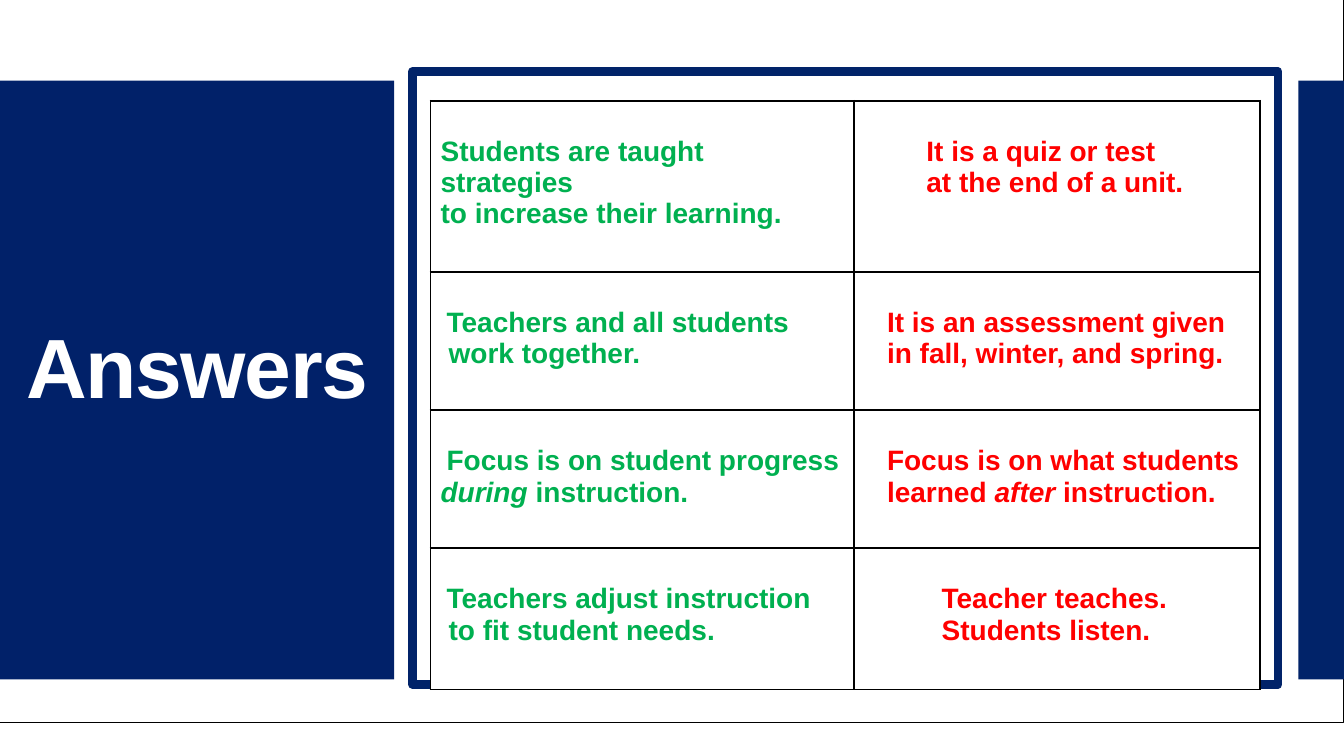
"""Build the answers slide with its two-column comparison table."""
from pptx import Presentation, util as u
from pptx.dml import color
from pptx.enum import shapes, text
from pptx.oxml import xmlchemy as xc

HUES = {"white": "FFFFFF", "black": "000000", "navy": "012169",
        "blue": "012369", "green": "00B050", "red": "FF0000"}
WIDE, HIGH = u.Inches(13.33), u.Inches(7.5)
COLS = (31.5, 30.22)
ROWS = (22.67, 18.27, 18.27, 18.67)
CELLS = [
    [[(0, "Students are taught strategies"), (0, "to increase their learning.")],
     [(4.65, "It is a quiz or test"), (4.65, "at the end of a unit.")]],
    [[(0.45, "Teachers and all students"), (0.6, "work together.")],
     [(1.72, "It is an assessment given"), (1.72, "in fall, winter, and spring.")]],
    [[(0.45, "Focus is on student progress"), (0, "*during* instruction.")],
     [(1.72, "Focus is on what students"), (1.72, "learned *after* instruction.")]],
    [[(0.45, "Teachers adjust instruction"), (0.6, "to fit student needs.")],
     [(5.78, "Teacher teaches."), (5.78, "Students listen.")]],
]


class Deck:
    """Hold the style and slide, on a grid of 100 columns by 100 rows."""

    def __init__(self):
        self.prs = Presentation()
        self.prs.slide_width, self.prs.slide_height = WIDE, HIGH
        self.page = self.prs.slides.add_slide(self.prs.slide_layouts[5])
        self.font = {"name": "Arial", "bold": True}

    def col(self, n):
        return u.Emu(int(WIDE * n / 100))

    def row(self, n):
        return u.Emu(int(HIGH * n / 100))

    def area(self, x, y, w, h):
        return self.col(x), self.row(y), self.col(w), self.row(h)

    def paint(self, fill, hue):
        fill.solid()
        fill.fore_color.rgb = color.RGBColor.from_string(HUES[hue])

    def put(self, item, vals):
        for key, val in vals.items():
            setattr(item, key, val)

    def words(self, para, line, hue, size):
        for n, part in enumerate(line.split("*")):
            if part:
                run = para.add_run()
                run.text = part
                self.put(run.font, {**self.font, "size": u.Pt(size), "italic": n % 2 == 1})
                self.paint(run.font.fill, hue)

    def panel(self, spot, fill, edge=None, width=0):
        box = self.page.shapes.add_shape(shapes.MSO_SHAPE.RECTANGLE, *self.area(*spot))
        box.shadow.inherit = False
        self.paint(box.fill, fill)
        if edge:
            self.paint(box.line.fill, edge)
            box.line.width = u.Pt(width)
            box.line._get_or_add_ln().append(xc.OxmlElement("a:round"))
        else:
            box.line.fill.background()

    def title(self, spot, line, hue, size):
        head = self.page.shapes.title
        left, top, width, height = self.area(*spot)
        self.put(head, {"left": left, "top": top, "width": width, "height": height})
        self.put(head.text_frame, {"vertical_anchor": text.MSO_ANCHOR.BOTTOM,
                                   "word_wrap": True, "auto_size": text.MSO_AUTO_SIZE.NONE})
        para = head.text_frame.paragraphs[0]
        self.put(para, {"alignment": text.PP_ALIGN.CENTER, "line_spacing": 0.9})
        self.words(para, line, hue, size)
        para.runs[0].font._element.set("spc", "-100")
        self.page.shapes._spTree.append(head._element)

    def edge(self, cell, hue, width):
        props = cell._tc.get_or_add_tcPr()
        for n, side in enumerate(("lnL", "lnR", "lnT", "lnB")):
            line = xc.OxmlElement("a:" + side)
            line.set("w", str(u.Pt(width)))
            fill = xc.OxmlElement("a:solidFill")
            tone = xc.OxmlElement("a:srgbClr")
            tone.set("val", HUES[hue])
            fill.append(tone)
            line.append(fill)
            props.insert(n, line)

    def cell(self, cell, lines, hue):
        self.put(cell, {"margin_top": self.row(4.67), "margin_left": u.Inches(0.1),
                        "margin_right": u.Inches(0.1), "margin_bottom": u.Inches(0.05)})
        self.paint(cell.fill, "white")
        self.edge(cell, "black", 1.5)
        frame = cell.text_frame
        for n, (inset, line) in enumerate(lines):
            para = frame.add_paragraph() if n else frame.paragraphs[0]
            props = para._p.get_or_add_pPr()
            props.set("marL", str(self.col(inset)))
            props.set("indent", "0")
            self.words(para, line, hue, 20)

    def table(self, x, y, cells, hues):
        spot = self.area(x, y, sum(COLS), sum(ROWS))
        grid = self.page.shapes.add_table(len(ROWS), len(COLS), *spot).table
        self.put(grid, {"first_row": False, "horz_banding": False})
        for col, size in zip(grid.columns, COLS):
            col.width = self.col(size)
        for r, size in enumerate(ROWS):
            grid.rows[r].height = self.row(size)
            for c, hue in enumerate(hues):
                self.cell(grid.cell(r, c), cells[r][c], hue)


def main():
    deck = Deck()
    deck.panel((0, -4.4, 100, 100), "white", "black", 0.75)
    deck.panel((-0.23, 10.67, 29.55, 79.2), "navy")
    deck.panel((96.6, 10.67, 3.4, 79.2), "blue")
    deck.title((-1.58, 35.47, 32.48, 20.27), "Answers", "white", 60)
    deck.panel((30.68, 9.47, 64.43, 81.07), "white", "blue", 6)
    deck.table(32.03, 13.33, CELLS, ("green", "red"))
    deck.prs.save("out.pptx")


if __name__ == "__main__":
    main()
